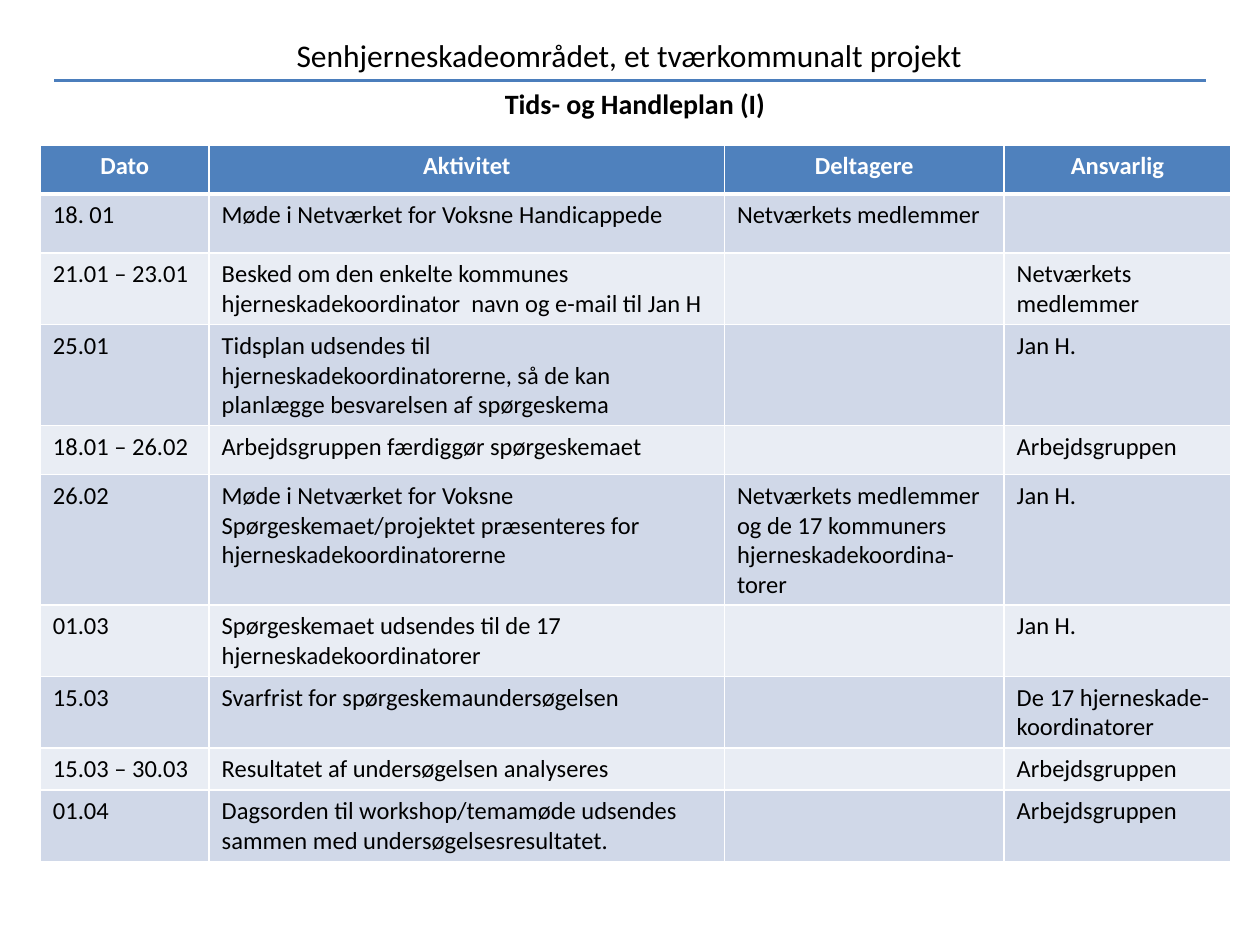
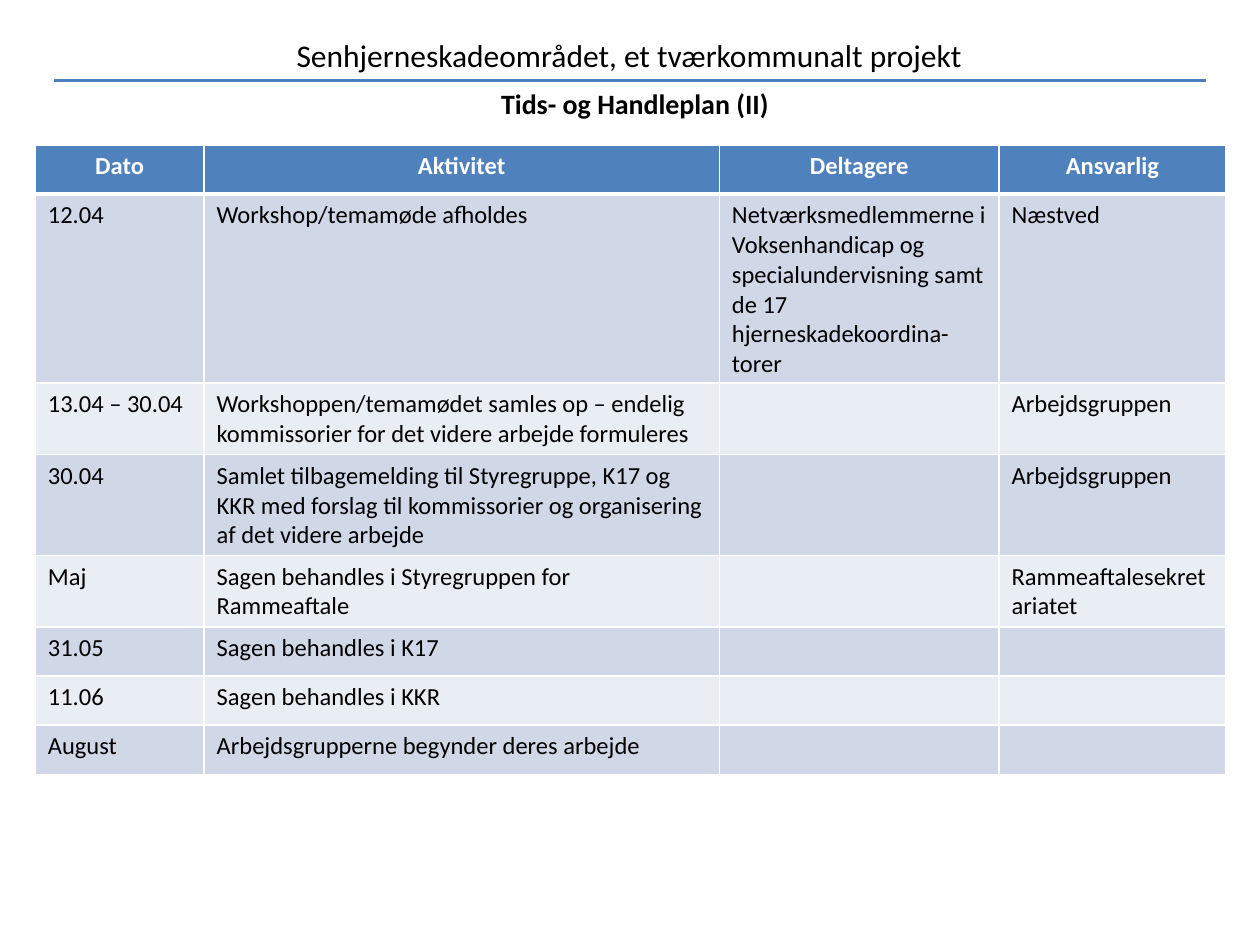
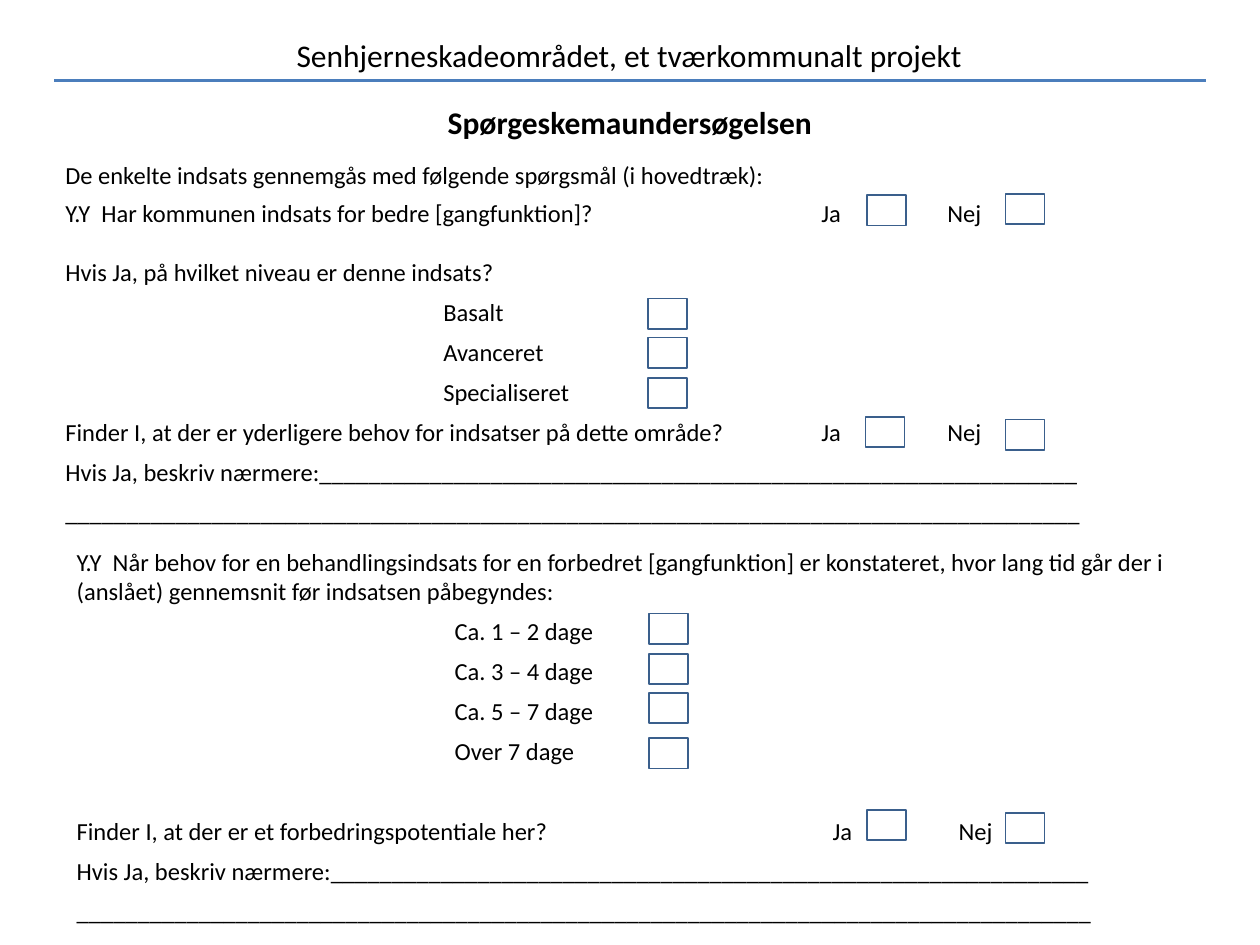
from lxml.etree import SubElement
from pptx import Presentation
from pptx.dml.color import RGBColor
from pptx.enum.shapes import MSO_CONNECTOR as Connector, MSO_SHAPE as Shape
from pptx.enum.text import MSO_AUTO_SIZE as AutoSize, PP_ALIGN as Align
from pptx.oxml.ns import qn
from pptx.util import Inches, Pt

COLORS = {
    "text": "000000",
    "white": "FFFFFF",
    "rule": "4B7EBC",
    "head": "4F81BD",
    "odd": "D0D8E8",
    "even": "E9EDF4",
    "box": "3A5F8C",
}
FONT = "Calibri"
PROJECT = "Senhjerneskadeområdet, et tværkommunalt projekt"
COLUMNS = ["Dato", "Aktivitet", "Deltagere", "Ansvarlig"]
COLUMN_WIDTHS = [1.34, 4.09, 2.22, 1.8]

PLAN_ONE = [
    (0.47, "18. 01", "Møde i Netværket for Voksne Handicappede", "Netværkets medlemmer", ""),
    (0.47, "21.01 – 23.01",
     "Besked om den enkelte kommunes hjerneskadekoordinator  navn og e-mail til Jan H",
     "", "Netværkets medlemmer"),
    (0.47, "25.01",
     "Tidsplan udsendes til hjerneskadekoordinatorerne, så de kan planlægge besvarelsen af spørgeskema",
     "", "Jan H."),
    (0.39, "18.01 – 26.02", "Arbejdsgruppen færdiggør spørgeskemaet", "", "Arbejdsgruppen"),
    (0.47, "26.02",
     "Møde i Netværket for Voksne\nSpørgeskemaet/projektet præsenteres for hjerneskadekoordinatorerne",
     "Netværkets medlemmer og de 17 kommuners hjerneskadekoordina-torer", "Jan H."),
    (0.41, "01.03", "Spørgeskemaet udsendes til de 17 hjerneskadekoordinatorer", "", "Jan H."),
    (0.31, "15.03", "Svarfrist for spørgeskemaundersøgelsen", "",
     "De 17 hjerneskade-koordinatorer"),
    (0.31, "15.03 – 30.03", "Resultatet af undersøgelsen analyseres", "", "Arbejdsgruppen"),
    (0.33, "01.04",
     "Dagsorden til workshop/temamøde udsendes sammen med undersøgelsesresultatet.",
     "", "Arbejdsgruppen"),
]
PLAN_TWO = [
    (0.32, "12.04", "Workshop/temamøde afholdes",
     "Netværksmedlemmerne i Voksenhandicap og specialundervisning samt de 17 hjerneskadekoordina-torer",
     "Næstved"),
    (0.39, "13.04 – 30.04",
     "Workshoppen/temamødet samles op – endelig kommissorier for det videre arbejde formuleres",
     "", "Arbejdsgruppen"),
    (0.39, "30.04",
     "Samlet tilbagemelding til Styregruppe, K17 og KKR med forslag til kommissorier "
     "og organisering af det videre arbejde", "", "Arbejdsgruppen"),
    (0.39, "Maj", "Sagen behandles i Styregruppen for Rammeaftale", "", "Rammeaftalesekretariatet"),
    (0.39, "31.05", "Sagen behandles i K17", "", ""),
    (0.39, "11.06", "Sagen behandles i KKR", "", ""),
    (0.39, "August", "Arbejdsgrupperne begynder deres arbejde", "", ""),
]

OPTION = {"before": 6, "indent": 3}
ANSWER = {"before": 6, "tabs": (6, 7)}
DESCRIBE = [
    ("Hvis Ja, beskriv nærmere:" + "_" * 62, {"before": 6}),
    ("_" * 83, {"before": 6}),
]
LEVEL_QUESTIONS = [
    ("De enkelte indsats gennemgås med følgende spørgsmål (i hovedtræk):", {}),
    ("Y.Y  Har kommunen indsats for bedre [gangfunktion]?\tJa\tNej", {"before": 5, "tabs": (6, 7)}),
    ("Hvis Ja, på hvilket niveau er denne indsats?", {"before": 17}),
    *[(level, OPTION) for level in ("Basalt", "Avanceret", "Specialiseret")],
    ("Finder I, at der er yderligere behov for indsatser på dette område?\tJa\tNej", ANSWER),
    *DESCRIBE,
]
WAIT_QUESTIONS = [
    ("Y.Y  Når behov for en behandlingsindsats for en forbedret [gangfunktion] er konstateret, "
     "hvor lang tid går der i (anslået) gennemsnit før indsatsen påbegyndes:", {}),
    *[(wait, OPTION) for wait in
      ("Ca. 1 – 2 dage", "Ca. 3 – 4 dage", "Ca. 5 – 7 dage", "Over 7 dage")],
    ("Finder I, at der er et forbedringspotentiale her?\tJa\tNej", {**ANSWER, "before": 29}),
    *DESCRIBE,
]
CHECKBOXES = [
    (6.88, 1.55), (7.98, 1.54),
    (5.14, 2.37), (5.14, 2.68), (5.14, 3),
    (6.87, 3.31), (7.98, 3.33),
    (5.15, 4.87), (5.15, 5.19), (5.15, 5.5), (5.15, 5.86),
    (6.88, 6.43), (7.98, 6.45),
]


def rgb(name):
    return RGBColor.from_string(COLORS[name])


def write(paragraph, text, size=14, bold=False, color="text", align=None,
          before=0, indent=0, tabs=()):
    paragraph.alignment = align
    paragraph.space_before = Pt(before)
    properties = paragraph._p.get_or_add_pPr()
    properties.set("marL", str(Inches(indent)))
    if tabs:
        stops = SubElement(properties, qn("a:tabLst"))
        for stop in tabs:
            SubElement(stops, qn("a:tab"), pos=str(Inches(stop)), algn="l")
    if not text:
        SubElement(paragraph._p, qn("a:endParaRPr"), sz=str(size * 100))
        return
    run = paragraph.add_run()
    run.text = text
    run.font.name = FONT
    run.font.size = Pt(size)
    run.font.bold = bold
    run.font.color.rgb = rgb(color)


def write_all(frame, lines):
    for number, (text, style) in enumerate(lines):
        write(frame.add_paragraph() if number else frame.paragraphs[0], text, **style)


class Deck:
    def __init__(self):
        self.show = Presentation()
        self.show.slide_width = Inches(10)
        self.show.slide_height = Inches(7.5)
        self.slide = None

    def start(self, heading, place, size):
        self.slide = self.show.slides.add_slide(self.show.slide_layouts[6])
        self.rule(0.43, 9.57, 0.64)
        self.text(place, [(heading, {"size": size, "bold": True, "align": Align.CENTER})])
        self.text((0.43, 0.24, 9.13, 0.4), [(PROJECT, {"size": 18, "align": Align.CENTER})])

    def rule(self, left, right, y):
        rule = self.slide.shapes.add_connector(
            Connector.STRAIGHT, Inches(left), Inches(y), Inches(right), Inches(y))
        rule.line.color.rgb = rgb("rule")
        rule.line.width = Pt(2)
        SubElement(rule._element.spPr, qn("a:effectLst"))

    def text(self, place, lines, top_margin=0.05):
        frame = self.slide.shapes.add_textbox(*map(Inches, place)).text_frame
        frame.word_wrap = True
        frame.auto_size = AutoSize.SHAPE_TO_FIT_TEXT
        frame.margin_top = Inches(top_margin)
        write_all(frame, lines)

    def checkbox(self, left, top):
        box = self.slide.shapes.add_shape(
            Shape.RECTANGLE, Inches(left), Inches(top), Inches(0.31), Inches(0.24))
        box.shadow.inherit = False
        box.fill.background()
        box.line.color.rgb = rgb("box")
        box.line.width = Pt(1)

    def cell(self, cell, text, fill, top=1, bottom=1, **style):
        write_all(cell.text_frame, [(line, style) for line in text.split("\n")])
        properties = cell._tc.get_or_add_tcPr()
        for side, width in (("L", 1), ("R", 1), ("T", top), ("B", bottom)):
            border = SubElement(properties, qn(f"a:ln{side}"), w=str(Pt(width)))
            color = SubElement(border, qn("a:solidFill"))
            SubElement(color, qn("a:srgbClr"), val=COLORS["white"])
        cell.fill.solid()
        cell.fill.fore_color.rgb = rgb(fill)

    def plan(self, left, height, activities):
        holder = self.slide.shapes.add_table(
            len(activities) + 1, len(COLUMNS), Inches(left), Inches(1.15),
            Inches(sum(COLUMN_WIDTHS)), Inches(height))
        table = holder.table
        for column, width in zip(table.columns, COLUMN_WIDTHS):
            column.width = Inches(width)
        table.rows[0].height = Inches(0.39)
        for column, title in enumerate(COLUMNS):
            self.cell(table.cell(0, column), title, "head", bottom=3,
                      bold=True, color="white", align=Align.CENTER)
        for row, (row_height, *texts) in enumerate(activities, 1):
            table.rows[row].height = Inches(row_height)
            for column, text in enumerate(texts):
                self.cell(table.cell(row, column), text, "odd" if row % 2 else "even",
                          top=3 if row == 1 else 1)
        holder.height = Inches(height)


def main():
    deck = Deck()
    plans = [("I", 0.32, 5.69, PLAN_ONE), ("II", 0.28, 5.01, PLAN_TWO)]
    for part, left, height, activities in plans:
        deck.start(f"Tids- og Handleplan ({part})", (0.59, 0.64, 8.9, 0.37), 16)
        deck.plan(left, height, activities)

    deck.start("Spørgeskemaundersøgelsen", (3.03, 0.77, 3.94, 0.4), 18)
    deck.text((0.42, 1.22, 8.9, 3.03), LEVEL_QUESTIONS)
    deck.text((0.51, 3.99, 8.9, 3.43), WAIT_QUESTIONS, top_margin=0.35)
    for left, top in CHECKBOXES:
        deck.checkbox(left, top)
    deck.show.save("out.pptx")


if __name__ == "__main__":
    main()
